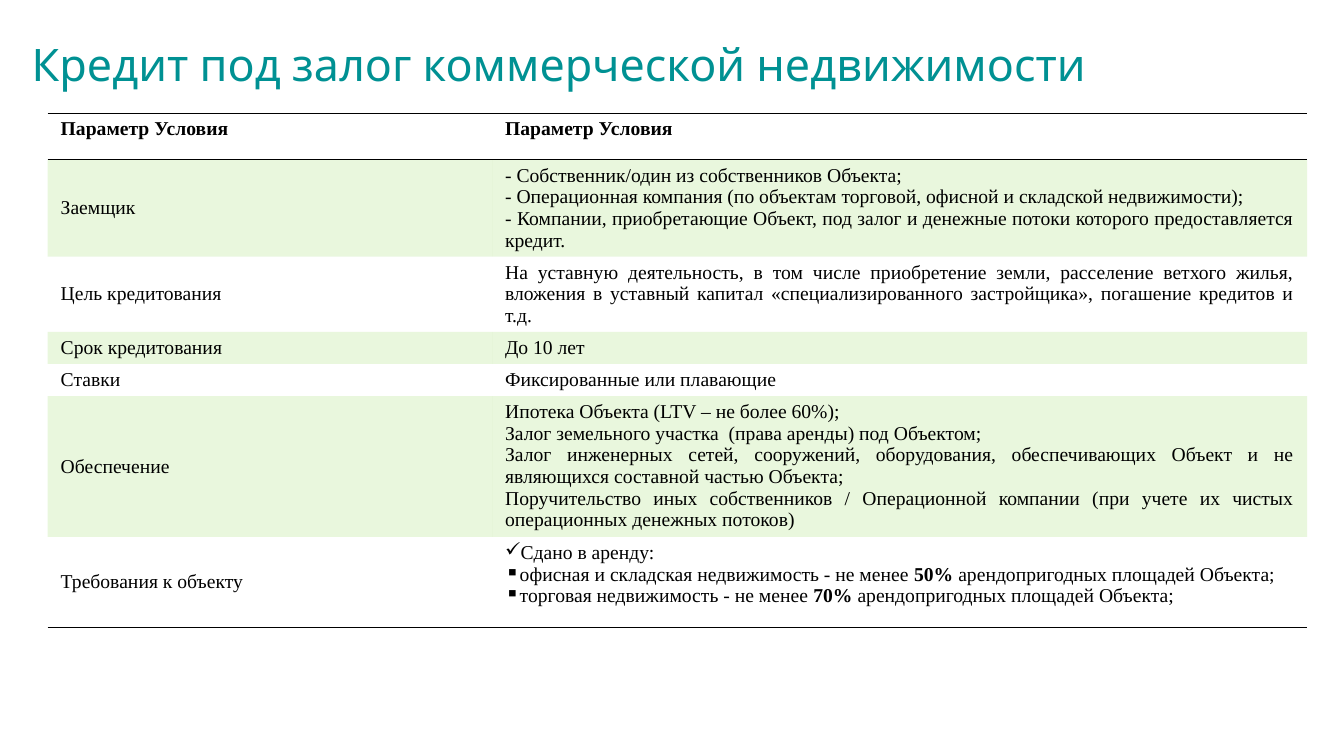
from lxml.etree import SubElement as Sub
from pptx import Presentation
from pptx.dml.color import RGBColor
from pptx.enum.text import MSO_ANCHOR as Anchor, MSO_AUTO_SIZE as Auto, PP_ALIGN as Align
from pptx.oxml.ns import qn
from pptx.util import Cm, Pt

ROWS = [
    (1.17, None, "*Параметр Условия*", ["*Параметр Условия*"]),
    (2.43, "91D757", "Заемщик", [
        "- Собственник/один из собственников Объекта;",
        "- Операционная компания (по объектам торговой, офисной и складской недвижимости);",
        "- Компании, приобретающие Объект, под залог и денежные потоки которого предоставляется кредит."]),
    (1.9, "FFFFFF", "Цель кредитования", [
        "На уставную деятельность, в том числе приобретение земли, расселение ветхого жилья, вложения "
        "в уставный капитал «специализированного застройщика», погашение кредитов и т.д."]),
    (0.8, "91D757", "Срок кредитования", ["До 10 лет"]),
    (0.8, "FFFFFF", "Ставки", ["Фиксированные или плавающие"]),
    (3.55, "91D757", "Обеспечение", [
        "Ипотека Объекта (LTV – не более 60%);",
        "Залог земельного участка  (права аренды) под Объектом;",
        "Залог инженерных сетей, сооружений, оборудования, обеспечивающих Объект и не являющихся "
        "составной частью Объекта;",
        "Поручительство иных собственников / Операционной компании (при учете их чистых "
        "операционных денежных потоков)"]),
    (2.29, None, "Требования к объекту", [
        "✓Сдано в аренду:",
        "▪офисная и складская недвижимость - не менее *50% *арендопригодных площадей Объекта;",
        "▪торговая недвижимость - не менее *70% *арендопригодных площадей Объекта;"]),
]


def paint(color):
    return RGBColor.from_string(color)


class Deck:
    """Holds the style and the current slide."""
    head, body = "League Spartan", "Times New Roman"
    teal, ink = "009193", "000000"
    plain = "{2D5ABB26-0587-4C30-8999-92F81FD0307C}"

    def __init__(self):
        self.prs = Presentation()
        self.prs.slide_width, self.prs.slide_height = Cm(33.87), Cm(19.05)
        self.slide = self.prs.slides.add_slide(self.prs.slide_layouts[5])

    def font(self, para, name, size, color):
        para.font.name, para.font.size = name, Pt(size)
        para.font.color.rgb = paint(color)

    def title(self, text, left, top, width, height):
        box = self.slide.shapes.title
        box.left, box.top, box.width, box.height = Cm(left), Cm(top), Cm(width), Cm(height)
        frame = box.text_frame
        frame.auto_size, frame.word_wrap = Auto.NONE, True
        frame.vertical_anchor = Anchor.MIDDLE
        frame.margin_left = frame.margin_right = 0
        para = frame.paragraphs[0]
        para.alignment, para.line_spacing = Align.LEFT, 0.9
        run = para.add_run()
        run.text = text
        self.font(para, self.head, 32, self.teal)
        glow = Sub(run.font._element, qn("a:effectLst"))
        cast = Sub(glow, qn("a:outerShdw"), blurRad="38100", dist="38100", dir="2700000")
        tint = Sub(cast, qn("a:srgbClr"), val="000000")
        Sub(tint, qn("a:alpha"), val="43000")

    def line(self, para, text):
        para.alignment = Align.JUSTIFY
        if text[0] in "✓▪":
            Sub(para._p.get_or_add_pPr(), qn("a:buChar"), char=text[0])
            text = text[1:]
        self.font(para, self.body, 14, self.ink)
        for num, part in enumerate(text.split("*")):
            if part:
                run = para.add_run()
                run.text = part
                if num % 2:
                    run.font.bold = True

    def edge(self, cell, side):
        rule = Sub(cell._tc.get_or_add_tcPr(), qn(f"a:ln{side}"), w=str(Pt(1)))
        Sub(Sub(rule, qn("a:solidFill")), qn("a:srgbClr"), val=self.ink)

    def cell(self, cell, lines, fill, sides):
        cell.margin_left = cell.margin_right = Cm(0.33)
        cell.margin_top = cell.margin_bottom = Cm(0.13)
        for side in sides:
            self.edge(cell, side)
        if fill:
            cell.fill.solid()
            cell.fill.fore_color.rgb = paint(fill)
            tint = cell._tc.tcPr.find(".//" + qn("a:solidFill") + "/" + qn("a:srgbClr"))
            Sub(tint, qn("a:alpha"), val="20000")
        else:
            cell.fill.background()
        frame = cell.text_frame
        for num, text in enumerate(lines):
            self.line(frame.add_paragraph() if num else frame.paragraphs[0], text)

    def table(self, rows, left, top, widths):
        high = sum(row[0] for row in rows)
        grid = self.slide.shapes.add_table(
            len(rows), len(widths), Cm(left), Cm(top), Cm(sum(widths)), Cm(high)).table
        grid.first_row = grid.horz_banding = False
        grid._tbl.tblPr.find(qn("a:tableStyleId")).text = self.plain
        for col, width in zip(grid.columns, widths):
            col.width = Cm(width)
        edges = {0: "TB", len(rows) - 1: "B"}
        for num, (tall, fill, name, terms) in enumerate(rows):
            grid.rows[num].height = Cm(tall)
            for col, lines in enumerate(([name], terms)):
                self.cell(grid.cell(num, col), lines, fill, edges.get(num, ""))
            if num:
                grid.cell(num, 0).vertical_anchor = Anchor.MIDDLE


def main():
    deck = Deck()
    deck.title("Кредит под залог коммерческой недвижимости", 0.8, 0.53, 33.07, 2.34)
    deck.table(ROWS, 1.2, 2.85, (11.2, 20.54))
    deck.prs.save("out.pptx")


if __name__ == "__main__":
    main()
